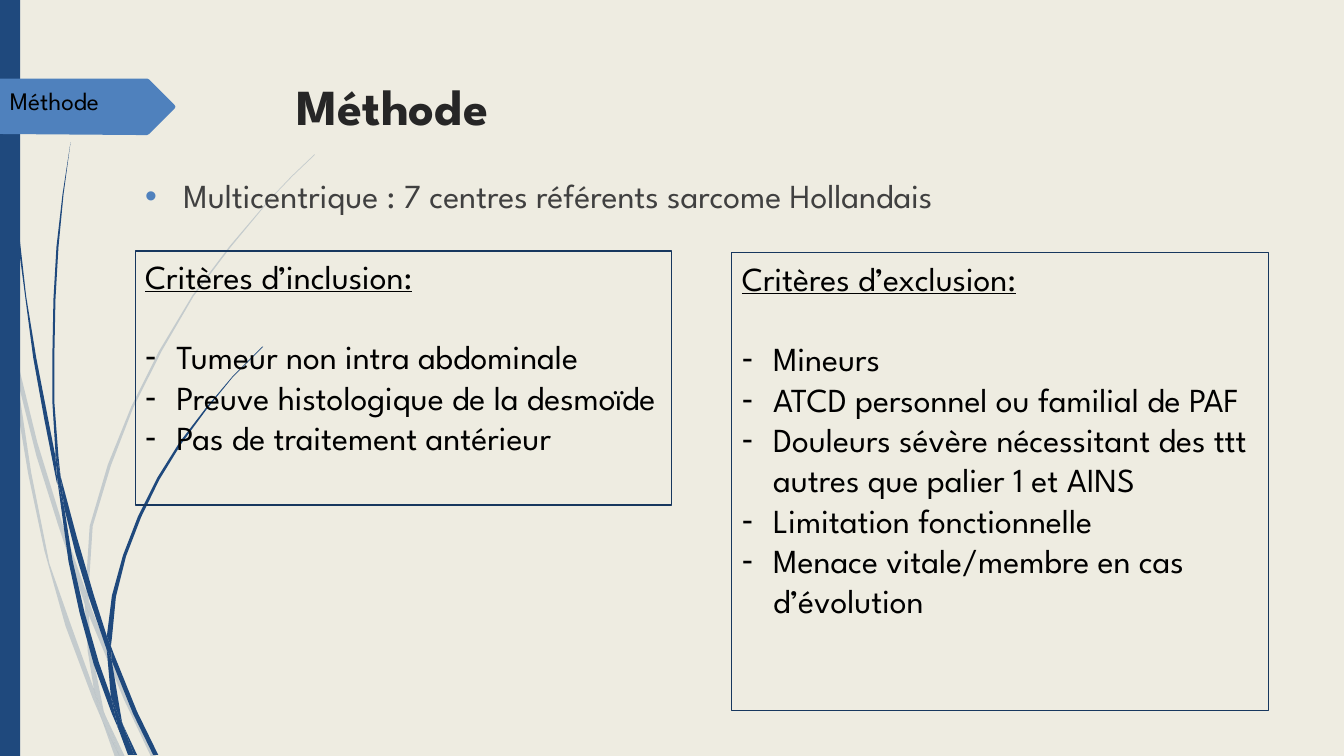
from dataclasses import dataclass

from lxml.etree import SubElement
from pptx import Presentation
from pptx.dml.color import RGBColor
from pptx.enum.shapes import MSO_SHAPE
from pptx.enum.text import MSO_ANCHOR, PP_ALIGN
from pptx.oxml.ns import qn
from pptx.util import Inches, Pt

PX = 9144


@dataclass(frozen=True)
class Theme:
    font: str = "League Spartan"
    bullet_font: str = "Arial"
    background: str = "EEECE1"
    navy: str = "1F497D"
    blue: str = "4F81BD"
    border: str = "17375E"
    heading: str = "262626"
    body: str = "404040"
    black: str = "000000"
    title_size: int = 36
    body_size: int = 24
    label_size: int = 18


THEME = Theme()

FAINT_BLADES = [
    [(11, 350), (9, 322), (0, 282), (0, 299), (10, 344)],
    [(58, 522), (84, 599), (85, 586), (62, 520), (37, 439), (14, 345),
     (17, 376), (36, 452)],
    [(92, 607), (88, 596), (88, 610), (123, 694), (150, 751), (155, 751),
     (127, 692)],
    [(119, 751), (124, 751), (105, 711)],
    [(93, 683), (70, 619), (49, 559), (31, 469), (17, 376), (11, 350),
     (18, 410), (28, 470), (44, 546), (65, 621), (92, 693), (101, 714),
     (99, 707)],
    [(84, 599), (87, 646), (93, 683), (96, 692), (105, 711), (103, 706),
     (91, 646), (88, 610), (88, 608)],
    [(88, 584), (92, 522), (110, 462), (132, 405), (160, 349), (192, 294),
     (229, 245), (268, 198), (290, 175), (312, 154), (312, 153), (289, 175),
     (268, 197), (228, 244), (191, 293), (158, 348), (130, 404), (107, 461),
     (89, 522), (85, 584), (85, 586), (88, 596)],
    [(101, 714), (114, 751), (119, 751)],
    [(88, 608), (88, 596), (85, 586), (84, 599)],
    [(96, 692), (93, 683), (99, 707), (101, 714), (119, 751), (105, 711)],
]
DARK_BLADES = [
    [(7, 110), (17, 233), (33, 355), (44, 416), (56, 477), (57, 481),
     (55, 453), (36, 355), (26, 294), (19, 232), (8, 109), (5, 48), (4, 0),
     (3, 0), (4, 48)],
    [(88, 592), (106, 645), (106, 631), (93, 590), (76, 532), (60, 472),
     (64, 505), (75, 549)],
    [(113, 649), (110, 641), (111, 656), (132, 708), (152, 749), (157, 749),
     (136, 706)],
    [(110, 691), (98, 657), (84, 608), (72, 556), (64, 505), (57, 477),
     (68, 557), (79, 608), (93, 659), (111, 708), (117, 722), (116, 717)],
    [(60, 472), (58, 453), (54, 400), (54, 349), (55, 297), (58, 245),
     (63, 193), (70, 141), (62, 193), (56, 245), (53, 297), (52, 349),
     (52, 400), (55, 449)],
    [(133, 749), (136, 749), (122, 719)],
    [(57, 477), (64, 505), (60, 472), (55, 449), (55, 453)],
    [(111, 633), (115, 592), (125, 552), (140, 513), (158, 476), (180, 440),
     (205, 406), (231, 374), (261, 344), (260, 344), (231, 373), (204, 405),
     (178, 439), (156, 474), (137, 512), (122, 551), (111, 591), (106, 631),
     (110, 641)],
    [(117, 722), (127, 749), (131, 749)],
    [(106, 645), (110, 691), (116, 706), (122, 719), (121, 716), (111, 656),
     (109, 651)],
    [(106, 645), (109, 651), (111, 656), (110, 641), (106, 631)],
    [(116, 706), (110, 691), (116, 717), (117, 722), (130, 749), (133, 749),
     (122, 719)],
]
TAB = [(173, 108), (148, 133), (146, 134), (136, 134), (0, 133), (0, 78),
       (136, 78), (146, 78), (148, 79), (173, 104), (174, 106)]

INCLUSION = [
    "Tumeur non intra abdominale",
    "Preuve histologique de la desmoïde",
    "Pas de traitement antérieur",
]
EXCLUSION = [
    "Mineurs",
    "ATCD personnel ou familial de PAF",
    "Douleurs sévère nécessitant des ttt autres que palier 1 et AINS",
    "Limitation fonctionnelle",
    "Menace vitale/membre en cas d’évolution",
]


def emu(*lengths):
    return [length * PX for length in lengths]


def paint(shape, color, opacity=100):
    shape.shadow.inherit = False
    shape.line.fill.background()
    shape.fill.solid()
    shape.fill.fore_color.rgb = RGBColor.from_string(color)
    if opacity < 100:
        tint = shape.element.spPr.find(".//" + qn("a:srgbClr"))
        SubElement(tint, qn("a:alpha"), val=str(opacity * 1000))


def add_outline(shapes, corners, color, opacity=100):
    builder = shapes.build_freeform(*corners[0], scale=PX)
    builder.add_line_segments(corners[1:], close=True)
    paint(builder.convert_to_shape(), color, opacity)


def add_grass(slide, blades, opacity=100):
    tuft = slide.shapes.add_group_shape()
    for blade in blades:
        add_outline(tuft.shapes, blade, THEME.navy, opacity)


def write(frame, text, *, size=THEME.body_size, color=THEME.black, bold=False,
          underline=False, bullet=None, bullet_color=None, indent=0,
          space_after=0, first=False):
    paragraph = frame.paragraphs[0] if first else frame.add_paragraph()
    paragraph.alignment = PP_ALIGN.LEFT
    paragraph.space_after = Pt(space_after)
    run = paragraph.add_run()
    run.text = text
    run.font.name = THEME.font
    run.font.size = Pt(size)
    run.font.bold = bold
    run.font.underline = underline
    run.font.color.rgb = RGBColor.from_string(color)
    if bullet:
        properties = paragraph._p.get_or_add_pPr()
        properties.set("marL", str(indent * PX))
        properties.set("indent", str(-indent * PX))
        if bullet_color:
            tint = SubElement(properties, qn("a:buClr"))
            SubElement(tint, qn("a:srgbClr"), val=bullet_color)
        SubElement(properties, qn("a:buFont"), typeface=THEME.bullet_font)
        SubElement(properties, qn("a:buChar"), char=bullet)


def top_frame(shape):
    frame = shape.text_frame
    frame.word_wrap = True
    frame.vertical_anchor = MSO_ANCHOR.TOP
    return frame


def add_text(slide, box, text, **style):
    frame = top_frame(slide.shapes.add_textbox(*emu(*box)))
    write(frame, text, first=True, **style)


def add_title(slide, box, text):
    title = slide.shapes.title
    title.left, title.top, title.width, title.height = emu(*box)
    write(top_frame(title), text, size=THEME.title_size, color=THEME.heading,
          bold=True, first=True)


def add_criteria(slide, box, heading, criteria):
    panel = slide.shapes.add_shape(MSO_SHAPE.RECTANGLE, *emu(*box))
    panel.shadow.inherit = False
    panel.fill.background()
    panel.line.color.rgb = RGBColor.from_string(THEME.border)
    panel.line.width = Pt(0.75)
    frame = top_frame(panel)
    write(frame, heading, underline=True, space_after=28.5, first=True)
    for criterion in criteria:
        write(frame, criterion, bullet="-", indent=31)


def main():
    deck = Presentation()
    deck.slide_width, deck.slide_height = Inches(13.33), Inches(7.5)
    slide = deck.slides.add_slide(deck.slide_layouts[5])
    slide.background.fill.solid()
    slide.background.fill.fore_color.rgb = RGBColor.from_string(THEME.background)

    add_grass(slide, FAINT_BLADES, opacity=20)
    add_grass(slide, DARK_BLADES)
    band = slide.shapes.add_shape(MSO_SHAPE.RECTANGLE, *emu(0, 0, 20, 750))
    paint(band, THEME.navy)
    add_outline(slide.shapes, TAB, THEME.blue)

    add_title(slide, (284, 69, 975, 140), "Méthode")
    add_text(slide, (134, 169, 975, 114),
             "Multicentrique : 7 centres référents sarcome Hollandais",
             color=THEME.body, bullet="•", bullet_color=THEME.blue, indent=38)
    add_criteria(slide, (134, 249, 532, 252), "Critères d’inclusion:", INCLUSION)
    add_criteria(slide, (726, 251, 532, 454), "Critères d’exclusion:", EXCLUSION)
    add_text(slide, (0, 80, 173, 40), "Méthode", size=THEME.label_size)

    deck.save("out.pptx")


if __name__ == "__main__":
    main()
